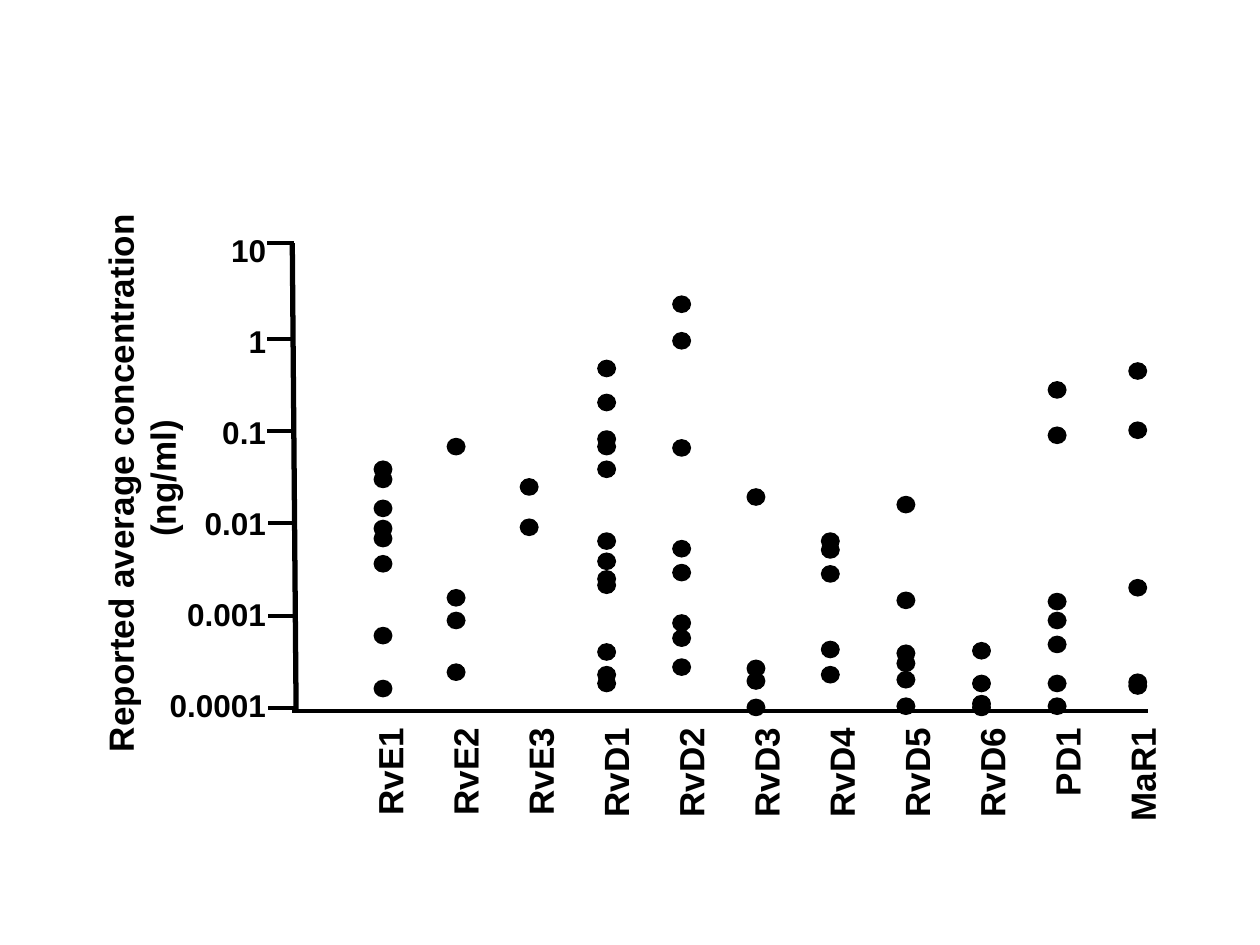
from lxml.etree import SubElement
from pptx import Presentation
from pptx.dml.color import RGBColor
from pptx.enum.shapes import MSO_CONNECTOR, MSO_SHAPE
from pptx.enum.text import MSO_AUTO_SIZE, PP_ALIGN
from pptx.oxml.ns import qn
from pptx.util import Inches, Pt

COLORS = {"ink": "000000"}
INK = RGBColor.from_string(COLORS["ink"])
UNIT = Inches(0.01)  # the slide is a grid of 1000 columns by 750 rows

AXIS_LABELS = ["10", "1", "0.1", "0.01", "0.001", "0.0001"]
TICK_ROWS = [193, 269, 342, 415, 489, 562]
TICK_LENGTH = 21
DOT_W, DOT_H = 14, 13

# category: (left column of its dots, top rows of its dots)
DOTS = {
    "RvE1": (297, [366, 374, 397, 413, 421, 441, 498, 540]),
    "RvE2": (355, [348, 468, 486, 527]),
    "RvE3": (413, [380, 412]),
    "RvD1": (474.5, [286, 313, 342, 348, 366, 423, 439, 453, 458, 511, 529, 536]),
    "RvD2": (534, [235, 264, 349, 429, 448, 488, 500, 523]),
    "RvD3": (593, [388, 524, 534, 555]),
    "RvD4": (652, [423, 430, 449, 509, 529]),
    "RvD5": (712, [394, 470, 512, 520, 533, 554]),
    "RvD6": (772, [510, 536, 552, 555]),
    "PD1": (832, [303, 339, 471, 486, 505, 536, 554]),
    "MaR1": (896, [288, 335, 460, 535, 538]),
}

prs = Presentation()
prs.slide_width, prs.slide_height = 1000 * UNIT, 750 * UNIT
s = prs.slides.add_slide(prs.slide_layouts[6])


def add_line(x1, y1, x2, y2, width):
    ends = [round(v * UNIT) for v in (x1, y1, x2, y2)]
    line = s.shapes.add_connector(MSO_CONNECTOR.STRAIGHT, *ends)
    line.line.color.rgb = INK
    line.line.width = Pt(width)
    SubElement(line._element.spPr, qn("a:effectLst"))


def add_labels(box, lines, size, align, rotation=0, spacing=None, gap=0):
    """Bold text box, one paragraph per line; spacing and gap are in points."""
    sp = s.shapes.add_textbox(*[round(v * UNIT) for v in box])
    sp.rotation = rotation
    tf = sp.text_frame
    tf.text = "\n".join(lines)
    tf.word_wrap = False
    tf.auto_size = MSO_AUTO_SIZE.SHAPE_TO_FIT_TEXT
    for i, p in enumerate(tf.paragraphs):
        p.alignment = align
        if spacing:
            p.line_spacing = Pt(spacing)
        if i and gap:
            p.space_before = Pt(gap)
        font = p.runs[0].font
        font.name, font.size, font.bold = "Arial", Pt(size), True
        font.color.rgb = INK


# Axes and ticks
add_line(232, 193, 235, 564, 3)
add_line(232, 564, 911, 564, 2.25)
for i, row in enumerate(TICK_ROWS):
    left = 212 if i < 3 else 213  # the vertical axis leans slightly
    add_line(left, row, left + TICK_LENGTH, row, 2.25)

# Axis labels and title
add_labels((124, 172, 97, 441), AXIS_LABELS, 18, PP_ALIGN.RIGHT, spacing=26, gap=26)
add_labels((-113, 345, 450, 77), ["Reported average concentration", " (ng/ml)"],
           20, PP_ALIGN.CENTER, rotation=270)
add_labels((546, 283, 95, 665), DOTS, 20, PP_ALIGN.RIGHT, rotation=270, spacing=43)

# Data points
for left, tops in DOTS.values():
    for top in tops:
        box = [round(v * UNIT) for v in (left, top, DOT_W, DOT_H)]
        dot = s.shapes.add_shape(MSO_SHAPE.OVAL, *box)
        dot.shadow.inherit = False
        dot.fill.solid()
        dot.fill.fore_color.rgb = INK
        dot.line.color.rgb = INK
        dot.line.width = Pt(0.75)

prs.save("out.pptx")
